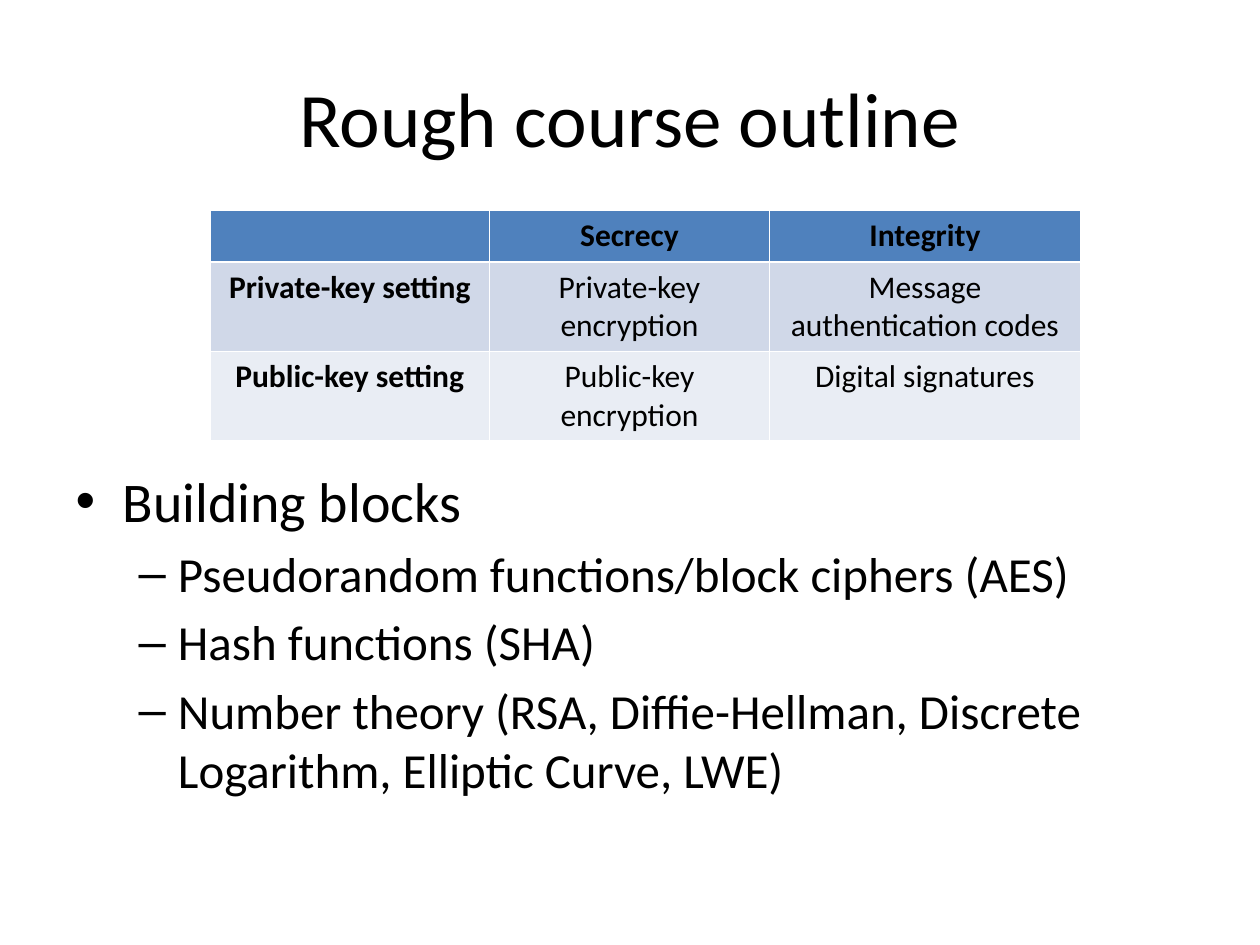
from pptx import Presentation
from pptx import util as u
from pptx.dml.color import RGBColor
from pptx.enum import text

W, H = 10, 7.5
FONT, INK = "Calibri", "000000"
TITLE = "Rough course outline"
ROWS = [
    ("", "Secrecy", "Integrity"),
    ("Private-key setting", "Private-key encryption", "Message authentication codes"),
    ("Public-key setting", "Public-key encryption", "Digital signatures"),
]
FILLS = ["4F81BD", "D0D8E8", "E9EDF4"]
COLS = [2.22, 2.22, 2.47]
HEIGHTS = [0.41, 0.7, 0.7]
BULLETS = [
    (0, "Building blocks"),
    (1, "Pseudorandom functions/block ciphers (AES)"),
    (1, "Hash functions (SHA)"),
    (1, "Number theory (RSA, Diffie-Hellman, Discrete Logarithm, Elliptic Curve, LWE)"),
]
SIZES = [32, 28]


def color(value):
    return RGBColor.from_string(value)


def place(sp, *box):
    sp.left, sp.top, sp.width, sp.height = map(u.Inches, box)


def add_run(p, words, size, bold=False):
    r = p.add_run()
    r.text = words
    r.font.name, r.font.size, r.font.bold = FONT, u.Pt(size), bold
    r.font.color.rgb = color(INK)


def add_title(s):
    sp = s.shapes.title
    place(sp, 0.05 * W, 0.04 * H, 0.9 * W, H / 6)
    p = sp.text_frame.paragraphs[0]
    p.alignment = text.PP_ALIGN.CENTER
    add_run(p, TITLE, 44)


def add_bullets(s):
    sp = s.placeholders[1]
    top = 3.65
    place(sp, 0.05 * W, top, 0.9 * W, 6.7 - top)
    tf = sp.text_frame
    for i, (level, words) in enumerate(BULLETS):
        p = tf.add_paragraph() if i else tf.paragraphs[0]
        p.level = level
        if not i:
            p.space_before = u.Pt(0)
        add_run(p, words, SIZES[level])


def add_grid(s):
    box = map(u.Inches, (W / 6, 1.67, sum(COLS), sum(HEIGHTS)))
    table = s.shapes.add_table(len(ROWS), len(COLS), *box).table
    for col, width in zip(table.columns, COLS):
        col.width = u.Inches(width)
    for i, (row, height) in enumerate(zip(ROWS, HEIGHTS)):
        table.rows[i].height = u.Inches(height)
        for j, words in enumerate(row):
            cell = table.cell(i, j)
            cell.fill.solid()
            cell.fill.fore_color.rgb = color(FILLS[i])
            if words:
                p = cell.text_frame.paragraphs[0]
                p.alignment = text.PP_ALIGN.CENTER
                add_run(p, words, 18, bold=i == 0 or j == 0)


def main():
    prs = Presentation()
    prs.slide_width, prs.slide_height = u.Inches(W), u.Inches(H)
    s = prs.slides.add_slide(prs.slide_layouts[1])
    add_title(s)
    add_bullets(s)
    add_grid(s)
    prs.save("out.pptx")


if __name__ == "__main__":
    main()
